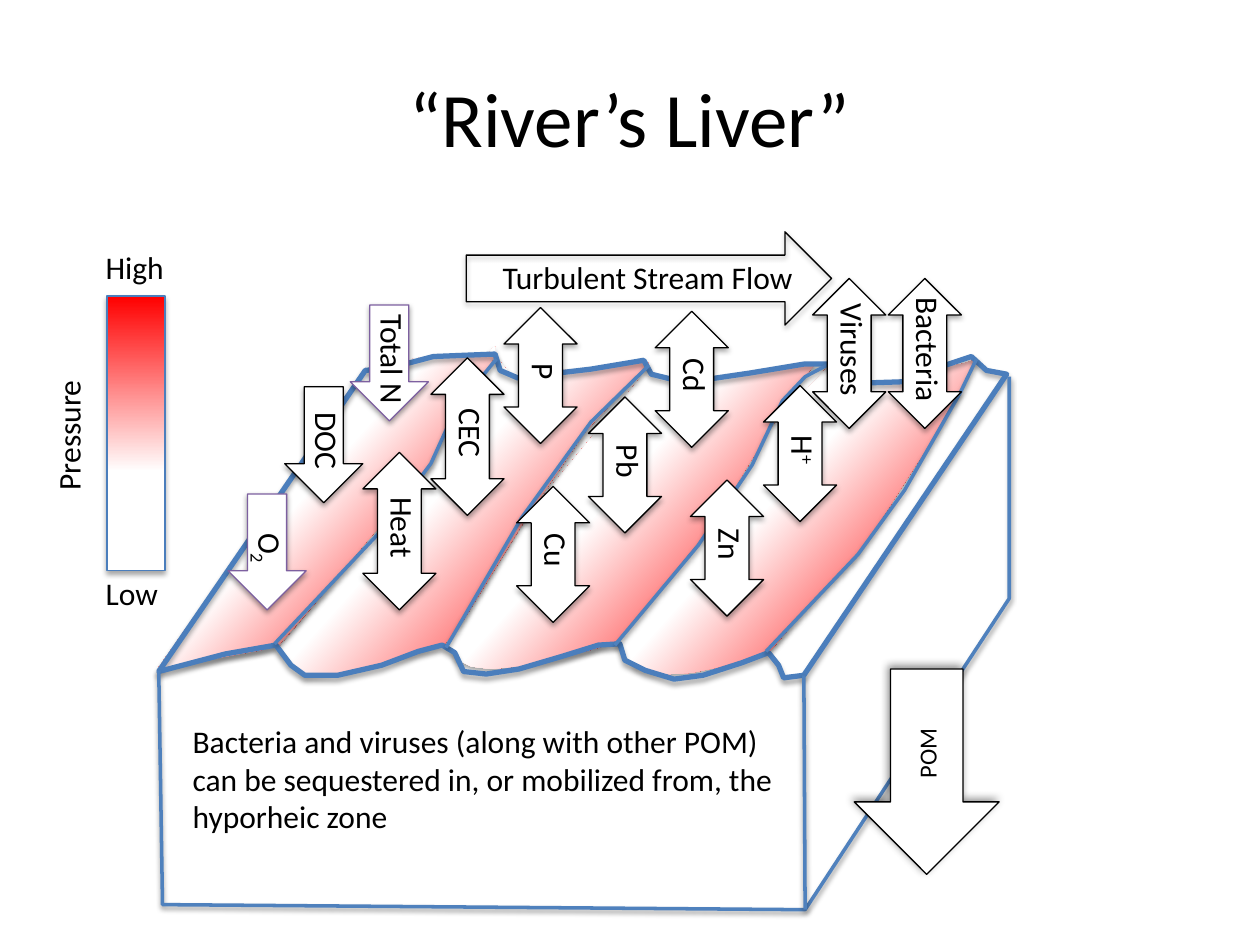
"""Build the "River's Liver" slide: a streambed block with exchange arrows."""
from lxml.etree import SubElement
from pptx import Presentation
from pptx.dml.color import RGBColor
from pptx.enum.shapes import MSO_CONNECTOR, MSO_SHAPE as SHAPE
from pptx.enum.text import MSO_ANCHOR, PP_ALIGN
from pptx.oxml.ns import qn
from pptx.util import Inches, Pt

CELL = Inches(0.01)
COLS, ROWS = 1000, 750
BLUE, EDGE, PURPLE = "4F81BD", "4B7EBC", "7D60A0"
RED, WHITE, BLACK = "FF0000", "FFFFFF", "000000"
SOFT, FIRM, SIDE = (35, 3.1, 1.8, 90), (38, 3.1, 1.6, 90), (43, 5, 2, 231)

# Outlines on the grid: a pair is a corner, six numbers are a Bezier curve.
BEDS = [
    [(611, 517), (550, 539, 500, 546, 490, 508), (598, 366),
     (620, 319, 637, 316, 657, 291), (663, 299, 675, 308, 690, 304),
     (718, 305, 745, 292, 773, 286), (761, 318, 712, 395, 679, 442),
     (643, 478, 643, 478, 611, 517)],
    [(488, 510), (452, 521, 361, 549, 356, 512), (426, 400), (510, 298),
     (519, 300, 534, 307, 550, 303), (604, 294),
     (620, 292, 644, 286, 647, 289), (620, 320),
     (605, 356, 581, 388, 561, 422)],
    [(353, 511), (321, 521), (276, 533), (243, 536), (221, 515), (312, 406),
     (349, 354), (364, 319), (393, 280, 393, 264, 393, 282), (404, 296),
     (458, 293), (515, 288), (465, 342), (415, 415), (368, 492)],
    [(221, 512), (207, 516), (125, 531), (210, 410), (291, 291), (345, 282),
     (393, 282), (376, 306, 380, 301, 363, 324), (342, 369),
     (302, 416, 281, 443, 221, 512)],
]
SURFACE = [
    (126, 533), (179, 519), (219, 512), (231, 528), (242, 536), (268, 536),
    (303, 528), (332, 517), (351, 512), (361, 518), (368, 533), (386, 535),
    (412, 531), (446, 521), (475, 512), (492, 511), (496, 524), (512, 532),
    (535, 539), (558, 536), (589, 526), (610, 518), (618, 528), (622, 538),
    (638, 536), (799, 297), (783, 294), (771, 283), (750, 290), (718, 303),
    (686, 304), (669, 304), (657, 289), (638, 289), (596, 296), (562, 301),
    (533, 301), (517, 297), (511, 286), (469, 293), (435, 297), (411, 300),
    (397, 294), (393, 281), (344, 283), (310, 292), (290, 294),
]
RIDGES = [
    [(218, 511), (300, 424), (342, 368), (362, 324), (394, 285)],
    [(354, 514), (414, 411), (469, 335), (515, 290)],
    [(488, 512), (554, 433), (597, 369), (621, 318), (639, 299), (656, 290)],
    [(608, 517), (681, 440), (718, 389), (762, 312), (775, 285)],
]
BLOCK = [(126, 532), (129, 718), (639, 722), (801, 475), (801, 299)]

# Label pieces (text, baseline), left, top, height, label width.
SINKS = [
    ([("Total N", 0)], 278, 242, 137, PURPLE),
    ([("O", 0), ("2", -25)], 181, 392, 72, PURPLE),
    ([("DOC", 0)], 226, 307, 115, BLACK),
]
EXCHANGES = [
    ([("P", 0)], 400, 244, 108, 62),
    ([("Heat", 0)], 288, 359, 125, 72),
    ([("Cu", 0)], 410, 386, 108, 62),
    ([("Pb", 0)], 467, 315, 108, 62),
    ([("Cd", 0)], 520, 247, 108, 62),
    ([("Zn", 0)], 548, 381, 108, 62),
    ([("H", 0), ("+", 30)], 606, 306, 108, 62),
    ([("Viruses", 0)], 645, 221, 119, 94),
    ([("Bacteria", 0)], 705, 221, 119, 105),
    ([("CEC", 0)], 342, 284, 125, 72),
]


def grid(*cells):
    """Turn grid cells into lengths."""
    return [int(c * CELL) for c in cells]


def rgb(color):
    """Return the colour of a hex string."""
    return RGBColor.from_string(color)


def add_shadow(sp, alpha, blur, dist, angle):
    """Give a shape or connector one outer shadow."""
    effects = SubElement(sp._element.spPr, qn("a:effectLst"))
    outer = SubElement(effects, qn("a:outerShdw"), blurRad=str(Pt(blur)),
                       dist=str(Pt(dist)), dir=str(angle * 60000), rotWithShape="0")
    color = SubElement(outer, qn("a:srgbClr"), val=BLACK)
    SubElement(color, qn("a:alpha"), val=str(alpha * 1000))


def set_line(sp, color, width):
    """Set the outline, or remove it when there is no colour."""
    if color:
        sp.line.color.rgb = rgb(color)
        sp.line.width = Pt(width)
    else:
        sp.line.fill.background()


def set_fill(sp, fill):
    """Fill with a hex colour, a (red, white, angle) gradient, or nothing."""
    if fill is None:
        sp.fill.background()
    elif isinstance(fill, str):
        sp.fill.solid()
        sp.fill.fore_color.rgb = rgb(fill)
    else:
        sp.fill.gradient()
        sp.fill.gradient_angle = 360 - fill[2]
        for stop, color, pos in zip(sp.fill.gradient_stops, (RED, WHITE), fill):
            stop.color.rgb = rgb(color)
            stop.position = pos


def style(sp, fill=None, line=None, width=0.75, shadow=SOFT):
    """Apply fill, outline and shadow."""
    set_fill(sp, fill)
    set_line(sp, line, width)
    add_shadow(sp, *shadow)


def flatten(outline, steps=8):
    """Return the outline with its curves sampled as points."""
    points = []
    for part in outline:
        if len(part) == 2:
            points.append(part)
            continue
        ctrl = [points[-1], part[:2], part[2:4], part[4:]]
        for t in (i / steps for i in range(1, steps + 1)):
            weights = ((1 - t) ** 3, 3 * t * (1 - t) ** 2, 3 * t * t * (1 - t), t ** 3)
            points.append(tuple(sum(w * c[axis] for w, c in zip(weights, ctrl))
                                for axis in (0, 1)))
    return points


def add_outline(s, outline, close=False, **look):
    """Draw a freeform through the outline."""
    start, *rest = flatten(outline)
    builder = s.shapes.build_freeform(*start, scale=float(CELL))
    builder.add_line_segments(rest, close=close)
    style(builder.convert_to_shape(), **look)


def add_shape(s, kind, box, **look):
    """Draw a preset shape on the grid."""
    sp = s.shapes.add_shape(kind, *grid(*box))
    style(sp, **look)
    return sp


def write(tf, pieces, size=18, align=PP_ALIGN.LEFT):
    """Write one paragraph from (text, baseline) pieces."""
    p = tf.paragraphs[0]
    p.alignment = align
    for text, baseline in pieces:
        r = p.add_run()
        r.text = text
        r.font.size, r.font.name = Pt(size), "Calibri"
        r.font.color.rgb = rgb(BLACK)
        if baseline:
            r._r.get_or_add_rPr().set("baseline", str(baseline * 1000))


def add_text(s, box, pieces, rotation=0, wrap=False, align=PP_ALIGN.LEFT):
    """Add a text box on the grid."""
    sp = s.shapes.add_textbox(*grid(*box))
    sp.rotation = rotation
    sp.text_frame.word_wrap = wrap
    write(sp.text_frame, pieces, align=align)


def add_arrow(s, kind, box, pieces, label, line, shadow, adjust=()):
    """Add a white vertical arrow with a label turned along it."""
    sp = add_shape(s, kind, box, fill=WHITE, line=line, shadow=shadow)
    for i, value in enumerate(adjust):
        sp.adjustments[i] = value
    x, y, w, h = box
    center, middle = x + w / 2 + 3, y + h / 2 - 3
    add_text(s, (center - label / 2, middle - 20, label, 40), pieces, 90, True, PP_ALIGN.CENTER)


def add_title(s, text):
    """Place and format the title."""
    sp = s.shapes.title
    sp.left, sp.top, sp.width, sp.height = grid(50, 30, 900, 125)
    sp.text_frame.vertical_anchor = MSO_ANCHOR.MIDDLE
    write(sp.text_frame, [(text, 0)], 44, PP_ALIGN.CENTER)


def add_legend(s):
    """Add the pressure scale."""
    add_shape(s, SHAPE.RECTANGLE, (85, 235, 46, 218), fill=(0, 0.64, 90), line=EDGE)
    add_text(s, (0, 325, 108, 40), [("Pressure", 0)], 270)
    add_text(s, (74, 192, 67, 40), [("High", 0)])
    add_text(s, (74, 451, 62, 40), [("Low", 0)])


def add_streambed(s):
    """Draw the dunes and the block below them."""
    for bed in BEDS:
        add_outline(s, bed, True, fill=(0.09, 0.56, 222))
    add_outline(s, SURFACE, True, line=EDGE, width=3)
    for outline in RIDGES + [BLOCK]:
        add_outline(s, outline, line=BLUE, width=2, shadow=FIRM)
    edge = s.shapes.add_connector(MSO_CONNECTOR.STRAIGHT, *grid(638, 536, 639, 722))
    set_line(edge, BLUE, 2)
    add_shadow(edge, *FIRM)


def add_flows(s):
    """Add the stream flow, the exchange arrows and the sinking matter."""
    flow = add_shape(s, SHAPE.DOWN_ARROW, (478, 76, 74, 290), line=BLACK, shadow=FIRM)
    flow.rotation = 270
    add_text(s, (389, 200, 253, 40), [("Turbulent Stream Flow", 0)])
    for pieces, x, y, label, line in SINKS:
        add_arrow(s, SHAPE.DOWN_ARROW, (x, y, 62, 92), pieces, label, line, FIRM)
    for pieces, x, y, h, label in EXCHANGES:
        add_arrow(s, SHAPE.UP_DOWN_ARROW, (x, y, 58, h), pieces, label, BLACK, SOFT, (0.48, 0.6))
    pom = add_shape(s, SHAPE.DOWN_ARROW, (678, 531, 115, 163), fill=WHITE, line=BLACK, shadow=SIDE)
    pom.text_frame.vertical_anchor = MSO_ANCHOR.MIDDLE
    pom.text_frame._txBody.bodyPr.set("vert", "vert270")
    write(pom.text_frame, [("POM", 0)], 14, PP_ALIGN.CENTER)


def main():
    """Build and save the slide."""
    prs = Presentation()
    prs.slide_width, prs.slide_height = grid(COLS, ROWS)
    s = prs.slides.add_slide(prs.slide_layouts[5])
    add_title(s, "“River’s Liver”")
    add_legend(s)
    add_streambed(s)
    add_text(s, (143, 568, 488, 101), [(
        "Bacteria and viruses (along with other POM) can be sequestered in, "
        "or mobilized from, the hyporheic zone", 0)], wrap=True)
    add_flows(s)
    prs.save("out.pptx")


if __name__ == "__main__":
    main()
